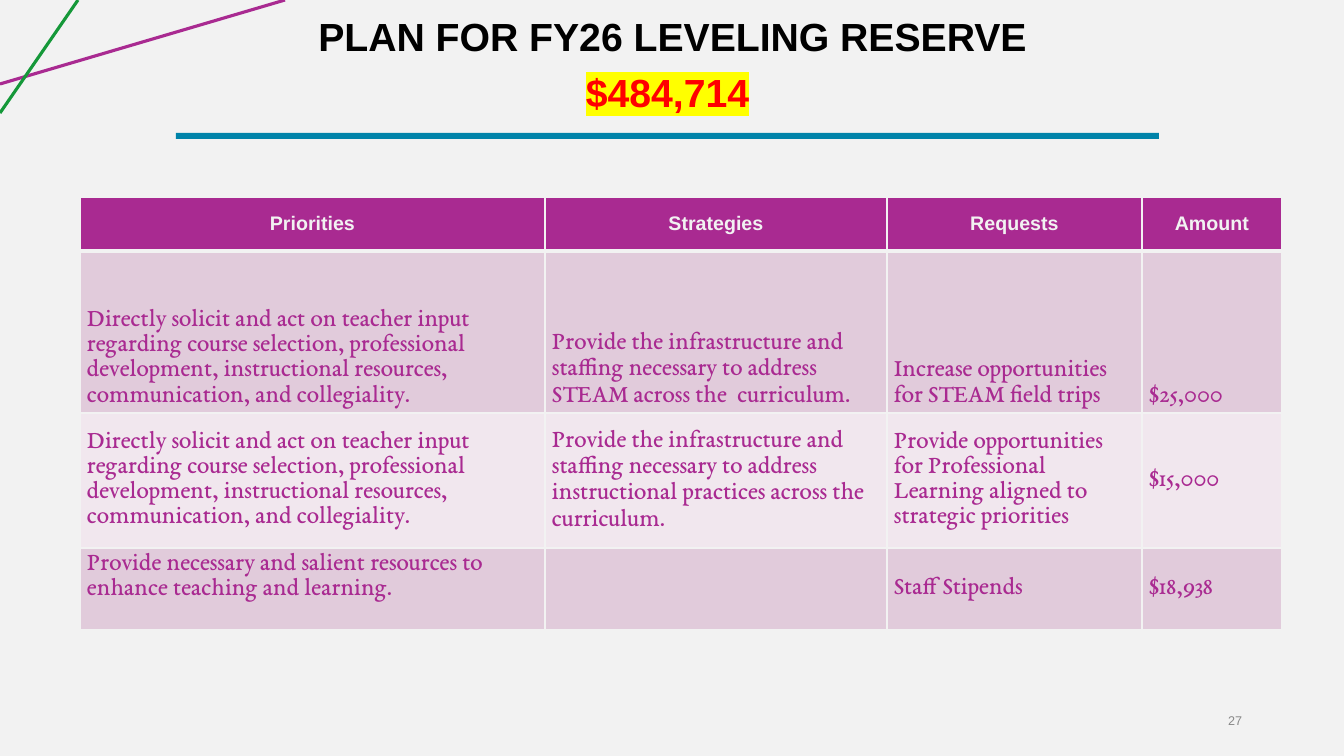
from lxml import etree
from pptx import Presentation
from pptx.dml.color import RGBColor
from pptx.enum import shapes, text
from pptx.oxml import ns
from pptx import util as u

PURPLE = RGBColor(0xA9, 0x2A, 0x91)
GREEN = RGBColor(0x15, 0x98, 0x39)
TEAL = RGBColor(0x00, 0x83, 0xA9)
PALE = RGBColor(0xF2, 0xF2, 0xF2)
BLACK = RGBColor(0, 0, 0)
RED = RGBColor(0xFF, 0, 0)
YELLOW = RGBColor(0xFF, 0xFF, 0)
GREY = RGBColor(0x88, 0x88, 0x88)
BANDS = [RGBColor(0xE1, 0xCB, 0xDB), RGBColor(0xF1, 0xE7, 0xEE)]

LEFT, CENTER, RIGHT = text.PP_ALIGN.LEFT, text.PP_ALIGN.CENTER, text.PP_ALIGN.RIGHT
TOP, MIDDLE, BOTTOM = (text.MSO_ANCHOR.TOP, text.MSO_ANCHOR.MIDDLE,
                       text.MSO_ANCHOR.BOTTOM)

# Content
TEACHER_INPUT = ("Directly solicit and act on teacher input regarding course selection, "
                 "professional development, instructional resources, communication, "
                 "and collegiality.")
INFRASTRUCTURE = "Provide the infrastructure and staffing necessary to address "
ROWS = [
    ["Priorities", "Strategies", "Requests", "Amount"],
    [TEACHER_INPUT, INFRASTRUCTURE + "STEAM across the  curriculum.",
     "Increase opportunities for STEAM field trips", "$25,000"],
    [TEACHER_INPUT, INFRASTRUCTURE + "instructional practices across the  curriculum.",
     "Provide opportunities for Professional Learning aligned to strategic priorities",
     "$15,000"],
    ["Provide necessary and salient resources to enhance teaching and learning.", "",
     "Staff Stipends", "$18,938"],
]
ROW_ANCHORS = [MIDDLE, BOTTOM, MIDDLE, MIDDLE]
COLUMN_WIDTHS = [465, 342, 255, 140]
ROW_HEIGHTS = [54, 162, 113, 82]
TABLE_LEFT, TABLE_TOP = 80, 197

# box, text, size, colour, bold, alignment, line spacing, highlight
LABELS = [
    ((93, 4, 1159, 69), "PLAN FOR FY26 LEVELING RESERVE", 28, BLACK, True, CENTER, 0.9, None),
    ((152, 48, 1031, 93), "$484,714", 28, RED, True, CENTER, 0.9, YELLOW),
    ((1143, 701, 109, 40), "27", 9, GREY, False, RIGHT, 1.0, None),
]
CORNER_LINES = [((0, 84, 285, 0), PURPLE), ((78, 0, 0, 113), GREEN)]
RULE = (176, 133, 983, 6)


def px(length):
    return round(length * 914400 / 100.8)


def format_text(paragraph, font_name, size, color, bold, alignment, spacing):
    paragraph.alignment = alignment
    paragraph.line_spacing = spacing
    for item in [paragraph, *paragraph.runs]:
        item.font.name = font_name
        item.font.size = u.Pt(size)
        item.font.bold = bold
        item.font.color.rgb = color


def add_label(slide, box, words, size, color, bold, alignment, spacing, highlight):
    frame = slide.shapes.add_textbox(*map(px, box)).text_frame
    frame.word_wrap = True
    frame.vertical_anchor = MIDDLE
    frame.text = words
    paragraph = frame.paragraphs[0]
    format_text(paragraph, "Arial", size, color, bold, alignment, spacing)
    if highlight is not None:
        mark = etree.Element(ns.qn("a:highlight"))
        etree.SubElement(mark, ns.qn("a:srgbClr"), val=str(highlight))
        fill = paragraph.runs[0].font._element.find(ns.qn("a:solidFill"))
        fill.addnext(mark)


def set_borders(cell, row):
    properties = cell._tc.get_or_add_tcPr()
    widths = {"L": 1, "R": 1, "T": 3 if row == 1 else 1, "B": 3 if row == 0 else 1}
    for index, (side, width) in enumerate(widths.items()):
        line = etree.Element(ns.qn("a:ln" + side), w=str(u.Pt(width)))
        fill = etree.SubElement(line, ns.qn("a:solidFill"))
        etree.SubElement(fill, ns.qn("a:srgbClr"), val=str(PALE))
        properties.insert(index, line)


def add_plan_table(slide):
    table = slide.shapes.add_table(
        len(ROWS), len(COLUMN_WIDTHS), px(TABLE_LEFT), px(TABLE_TOP),
        px(sum(COLUMN_WIDTHS)), px(sum(ROW_HEIGHTS))).table
    for column, width in zip(table.columns, COLUMN_WIDTHS):
        column.width = px(width)
    for row, height in zip(table.rows, ROW_HEIGHTS):
        row.height = px(height)
    for r, values in enumerate(ROWS):
        for c, value in enumerate(values):
            cell = table.cell(r, c)
            cell.text = value
            cell.margin_left = cell.margin_right = px(7)
            cell.margin_top = cell.margin_bottom = px(4)
            cell.vertical_anchor = TOP if (r, c) == (3, 0) else ROW_ANCHORS[r]
            cell.fill.solid()
            paragraph = cell.text_frame.paragraphs[0]
            if r == 0:
                cell.fill.fore_color.rgb = PURPLE
                format_text(paragraph, "Arial", 14, PALE, True, CENTER, 1.0)
            else:
                cell.fill.fore_color.rgb = BANDS[(r - 1) % 2]
                spacing = 1.05 if c == 1 else 1.0
                format_text(paragraph, "EB Garamond", 18, PURPLE, False, LEFT, spacing)
            set_borders(cell, r)


def main():
    presentation = Presentation()
    presentation.slide_width, presentation.slide_height = px(1344), px(756)
    slide = presentation.slides.add_slide(presentation.slide_layouts[6])
    slide.background.fill.solid()
    slide.background.fill.fore_color.rgb = PALE

    # Corner lines
    for ends, color in CORNER_LINES:
        line = slide.shapes.add_connector(shapes.MSO_CONNECTOR.STRAIGHT, *map(px, ends))
        line.line.color.rgb = color
        line.line.width = u.Pt(2.25)
        etree.SubElement(line._element.spPr, ns.qn("a:effectLst"))

    # Title, amount and page number
    for label in LABELS:
        add_label(slide, *label)

    # Rule under the title
    rule = slide.shapes.add_shape(shapes.MSO_SHAPE.RECTANGLE, *map(px, RULE))
    rule.shadow.inherit = False
    rule.fill.solid()
    rule.fill.fore_color.rgb = TEAL
    rule.line.fill.background()

    add_plan_table(slide)
    presentation.save("out.pptx")


if __name__ == "__main__":
    main()
